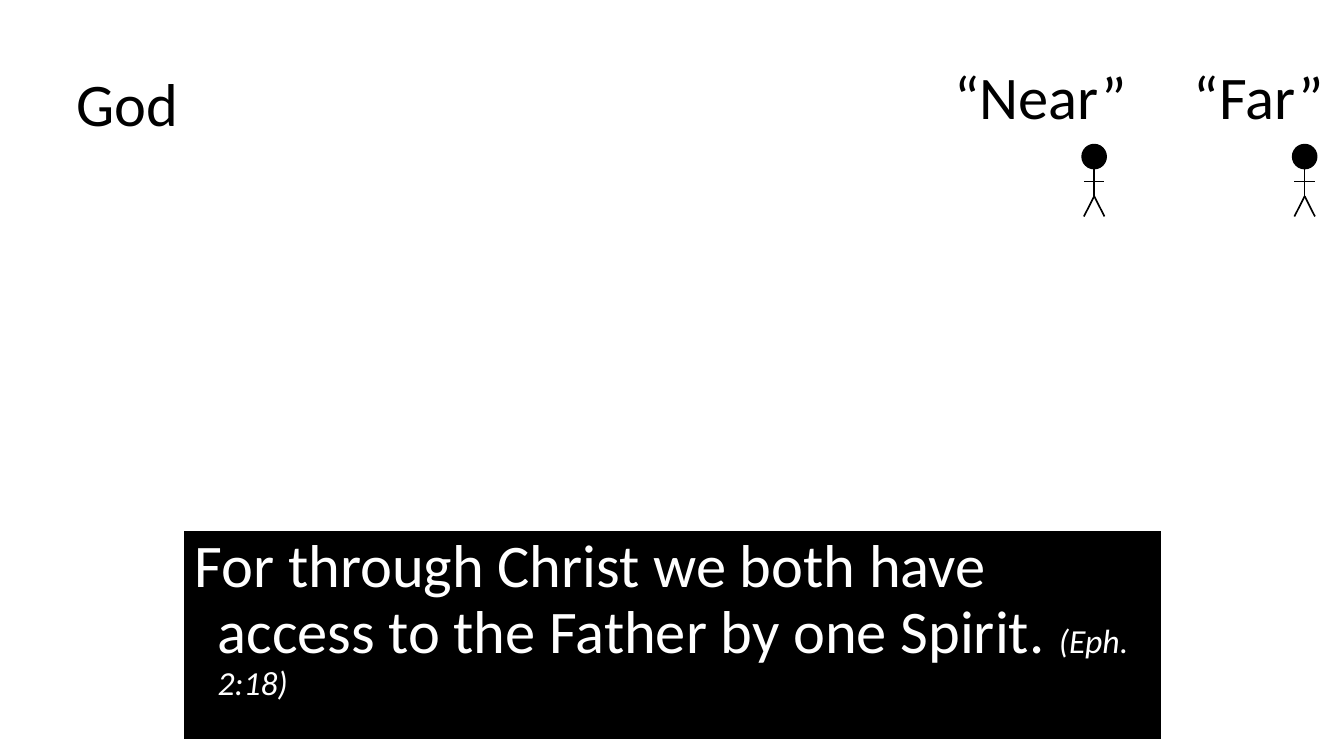
from lxml import etree
from pptx import Presentation
from pptx.dml.color import RGBColor
from pptx.enum.shapes import MSO_CONNECTOR, MSO_SHAPE
from pptx.enum.text import MSO_ANCHOR, PP_ALIGN
from pptx.oxml.ns import qn
from pptx.util import Inches, Pt

STRAIGHT = MSO_CONNECTOR.STRAIGHT
OVAL = MSO_SHAPE.OVAL
ROUND_RECT = MSO_SHAPE.ROUNDED_RECTANGLE
TOP = MSO_ANCHOR.TOP
CENTER = PP_ALIGN.CENTER
LEFT = PP_ALIGN.LEFT

FONT = "Calibri"
COLORS = {"ink": "000000", "paper": "FFFFFF"}


def color(name):
    return RGBColor.from_string(COLORS[name])


def set_font(font, size, name):
    font.name = FONT
    font.size = Pt(size)
    font.color.rgb = color(name)


def add_filled(shapes, kind, box, outline, width):
    s = shapes.add_shape(kind, *map(Inches, box))
    s.shadow.inherit = False
    s.fill.solid()
    s.fill.fore_color.rgb = color("ink")
    s.line.color.rgb = color(outline)
    s.line.width = Pt(width)
    return s


def add_limb(shapes, x1, y1, x2, y2):
    s = shapes.add_connector(STRAIGHT, *map(Inches, (x1, y1, x2, y2)))
    s.line.color.rgb = color("ink")
    s.line.width = Pt(1)
    etree.SubElement(s._element.spPr, qn("a:effectLst"))


def add_person(slide, left, top, width, height):
    shapes = slide.shapes.add_group_shape().shapes
    middle, right = left + width / 2, left + width
    neck, arms = top + width, top + height / 2
    hip, feet = top + height * 0.71, top + height
    add_filled(shapes, OVAL, (left, top, width, width), "ink", 3)
    add_limb(shapes, middle, neck, middle, hip)
    add_limb(shapes, middle, hip, right, feet)
    add_limb(shapes, middle, hip, left, feet)
    add_limb(shapes, left, arms, right, arms)


def add_label(slide, text, left, top, width, height):
    s = slide.shapes.add_textbox(*map(Inches, (left, top, width, height)))
    tf = s.text_frame
    tf.word_wrap = True
    p = tf.paragraphs[0]
    p.text = text
    p.alignment = CENTER
    set_font(p.font, 36, "ink")


def add_verse(slide, verse, reference, left, top, width, height):
    box = (left, top, width, height)
    s = add_filled(slide.shapes, ROUND_RECT, box, "paper", 2)
    s.adjustments[0] = 0
    tf = s.text_frame
    tf.word_wrap = True
    tf.vertical_anchor = TOP
    p = tf.paragraphs[0]
    p.alignment = LEFT
    p.line_spacing = 0.9
    indent = Inches(0.19)
    pPr = p._p.get_or_add_pPr()
    pPr.set("marL", str(indent))
    pPr.set("indent", str(-indent))
    for text, size, italic in ((verse, 36, False), (reference, 20, True)):
        r = p.add_run()
        r.text = text
        r.font.italic = italic
        set_font(r.font, size, "paper")


def main():
    prs = Presentation()
    prs.slide_width = Inches(11.11)
    prs.slide_height = Inches(6.25)
    slide = prs.slides.add_slide(prs.slide_layouts[6])
    for left in (8.96, 10.7):
        add_person(slide, left, 1.21, 0.17, 0.58)
    add_label(slide, "“Near”", 7.72, 0.44, 1.76, 0.71)
    add_label(slide, "“Far”", 9.76, 0.44, 1.29, 0.71)
    add_verse(
        slide,
        "For through Christ we both have access to the Father by one Spirit. ",
        "(Eph. 2:18)",
        1.51, 4.38, 8.1, 1.74,
    )
    add_label(slide, "God", 0.43, 0.5, 1.24, 0.71)
    prs.save("out.pptx")


if __name__ == "__main__":
    main()
